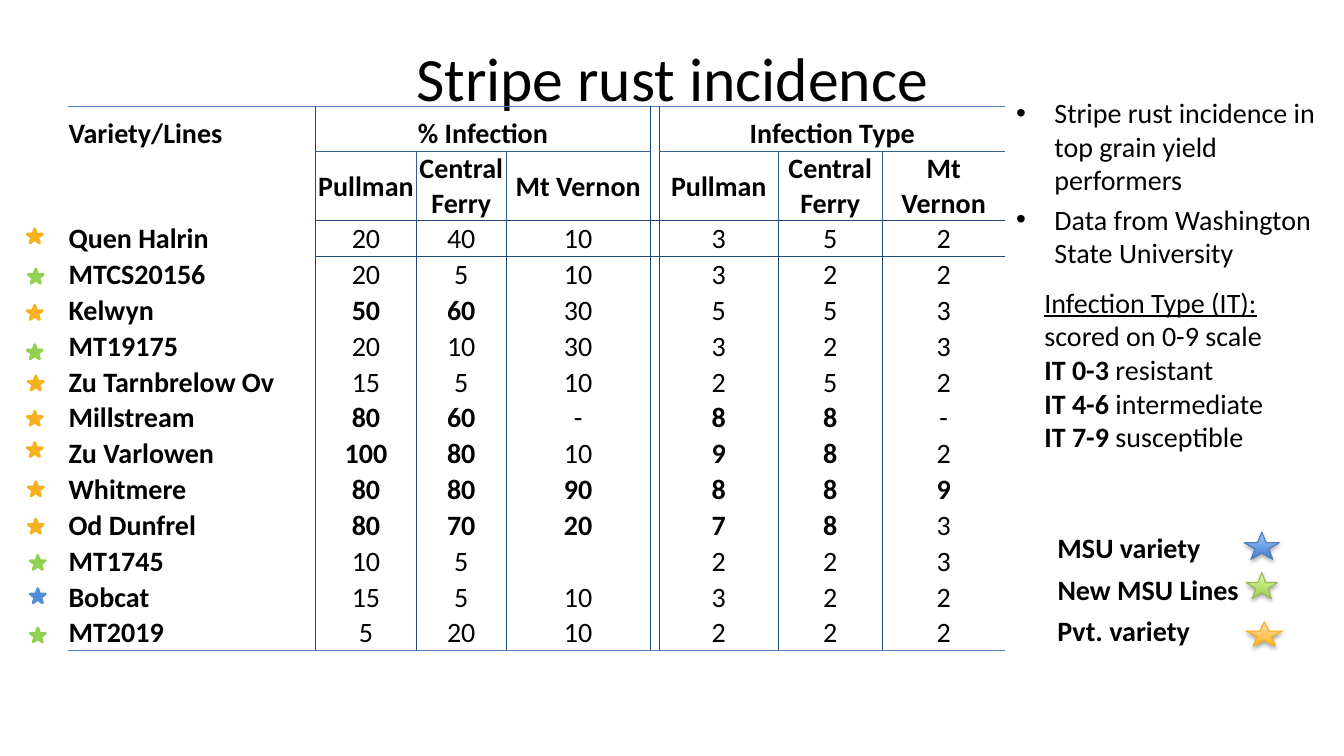
from lxml import etree
from pptx import Presentation, util as u
from pptx.dml.color import RGBColor
from pptx.enum import shapes, text
from pptx.oxml import ns

FONT = "Calibri"
BLACK, NAVY, STEEL, BLUE = "000000", "1F497D", "376092", "4F81BD"
PRIVATE, NEW_LINE, MSU = "F7B11E", "92D050", "558ED5"
COLUMN_WIDTHS = [2.46, 1, 0.89, 1.43, 0.09, 1.18, 1.03, 1.22]
SPACER = 4
SITES = ["Pullman", "Central Ferry", "Mt Vernon"]
BOLD_MARK = "*"

# name, star colour, star left, star top, % infection, infection type
VARIETIES = [
    ("Quen Halrin", PRIVATE, 0.27, 2.27, ["20", "40", "10"], ["3", "5", "2"]),
    ("MTCS20156", NEW_LINE, 0.28, 2.67, ["20", "5", "10"], ["3", "2", "2"]),
    ("Kelwyn", PRIVATE, 0.27, 3.03, ["*50", "*60", "30"], ["5", "5", "3"]),
    ("MT19175", NEW_LINE, 0.27, 3.42, ["20", "10", "30"], ["3", "2", "3"]),
    ("Zu Tarnbrelow Ov", PRIVATE, 0.28, 3.73, ["15", "5", "10"], ["2", "5", "2"]),
    ("Millstream", PRIVATE, 0.27, 4.08, ["*80", "*60", "-"], ["*8", "*8", "-"]),
    ("Zu Varlowen", PRIVATE, 0.27, 4.39, ["*100", "*80", "10"], ["*9", "*8", "2"]),
    ("Whitmere", PRIVATE, 0.28, 4.78, ["*80", "*80", "*90"], ["*8", "*8", "*9"]),
    ("Od Dunfrel", PRIVATE, 0.28, 5.15, ["*80", "*70", "*20"], ["*7", "*8", "3"]),
    ("MT1745", NEW_LINE, 0.3, 5.51, ["10", "5", ""], ["2", "2", "3"]),
    ("Bobcat", MSU, 0.3, 5.84, ["15", "5", "10"], ["3", "2", "2"]),
    ("MT2019", NEW_LINE, 0.3, 6.23, ["5", "20", "10"], ["2", "2", "2"]),
]
LEGEND = [
    ("MSU variety", (10.39, 5.21, 2.4, 0.44), (12.34, 5.28, 0.35, 0.27),
     ("3F80CE", "A4C4FF", "4B7EBC")),
    ("New MSU Lines", (10.39, 5.63, 2.12, 0.44), (12.36, 5.68, 0.31, 0.26),
     ("A0CA4A", "DAFFA5", "98B955")),
    ("Pvt. variety", (10.39, 6.04, 1.76, 0.44), (12.36, 6.17, 0.36, 0.24),
     ("FFB416", "FFDDB9", "F7AF18")),
]


def color(value):
    """Turn a hex string into a colour."""
    return RGBColor.from_string(value)


def add_xml(parent, tag, **attributes):
    """Append a drawing element with the given attributes."""
    return etree.SubElement(parent, ns.qn(tag), attributes)


def style(font, size=20, bold=False):
    """Set face, size, weight and colour of a font."""
    font.name, font.size, font.bold = FONT, u.Pt(size), bold
    font.color.rgb = color(BLACK)


def add_text(slide, box, paragraphs, size=20, bold=False):
    """Add a wrapped text box with one paragraph per string."""
    frame = slide.shapes.add_textbox(*map(u.Inches, box)).text_frame
    frame.word_wrap = True
    frame.text = "\n".join(paragraphs)
    for paragraph in frame.paragraphs:
        for run in paragraph.runs:
            style(run.font, size, bold)
    return frame


def add_title(slide, box):
    """Add the centred slide title."""
    frame = add_text(slide, box, ["Stripe rust incidence"], 44)
    frame.vertical_anchor = text.MSO_ANCHOR.MIDDLE
    frame.paragraphs[0].alignment = text.PP_ALIGN.CENTER


def add_bullets(slide, box):
    """Add the bulleted remarks beside the table."""
    frame = add_text(slide, box, ["Stripe rust incidence in top grain yield performers",
                                  "Data from Washington State University"])
    indent = u.Inches(0.38)
    for index, paragraph in enumerate(frame.paragraphs):
        properties = paragraph._p.get_or_add_pPr()
        properties.set("marL", str(indent))
        properties.set("indent", str(-indent))
        add_xml(properties, "a:buFont", typeface="Arial")
        add_xml(properties, "a:buChar", char="•")
        if index:
            paragraph.space_before = u.Pt(4)


def add_scale(slide, box):
    """Add the explanation of the infection type scale."""
    lines = [("Infection Type (IT): ", "scored on 0-9 scale"), ("IT 0-3 ", "resistant"),
             ("IT 4-6 ", "intermediate"), ("IT 7-9 ", "susceptible")]
    frame = add_text(slide, box, [term for term, meaning in lines])
    for index, (paragraph, line) in enumerate(zip(frame.paragraphs, lines)):
        term = paragraph.runs[0]
        term.font.bold, term.font.underline = index > 0, index == 0
        meaning = paragraph.add_run()
        meaning.text = line[1]
        style(meaning.font)


def vertical_line(row, edge):
    """Give the colour of the line left of column number edge, if any."""
    inside_group = edge not in (1, SPACER, SPACER + 1)
    if edge in (0, len(COLUMN_WIDTHS)) or (row == 0 and inside_group):
        return None
    return STEEL if row == 1 and inside_group else NAVY


def horizontal_line(edge, column):
    """Give the colour of the line above row number edge, if any."""
    if edge in (0, len(VARIETIES) + 2):
        return BLUE
    if edge == 1 and column not in (0, SPACER):
        return STEEL
    return NAVY if edge in (2, 3) and column else None


def set_borders(cell, row, column):
    """Draw the four borders of a table cell."""
    lines = {"a:lnL": vertical_line(row, column), "a:lnR": vertical_line(row, column + 1),
             "a:lnT": horizontal_line(row, column), "a:lnB": horizontal_line(row + 1, column)}
    properties = cell._tc.get_or_add_tcPr()
    for tag, line_color in lines.items():
        line = add_xml(properties, tag, w=str(u.Pt(1)))
        if line_color:
            add_xml(add_xml(line, "a:solidFill"), "a:srgbClr", val=line_color)
        else:
            add_xml(line, "a:noFill")


def fill_cell(cell, value, row, column):
    """Write and format one table cell."""
    set_borders(cell, row, column)
    cell.fill.background()
    cell.margin_left = cell.margin_right = cell.margin_top = u.Inches(0.01)
    cell.margin_bottom = 0
    cell.vertical_anchor = text.MSO_ANCHOR.MIDDLE if row else text.MSO_ANCHOR.BOTTOM
    paragraph = cell.text_frame.paragraphs[0]
    paragraph.text = value.removeprefix(BOLD_MARK)
    if column:
        paragraph.alignment = text.PP_ALIGN.CENTER
    bold = row < 2 or column == 0 or value.startswith(BOLD_MARK)
    for run in paragraph.runs:
        style(run.font, bold=bold)


def add_incidence_table(slide, box):
    """Add the table of infection by variety and site."""
    rows = [["Variety/Lines", "% Infection", "", "", "", "Infection Type", "", ""],
            ["", *SITES, "", *SITES]]
    rows += [[name, *infection, "", *kind] for name, _, _, _, infection, kind in VARIETIES]
    table = slide.shapes.add_table(len(rows), len(COLUMN_WIDTHS), *map(u.Inches, box)).table
    table.first_row = table.horz_banding = False
    for column, width in zip(table.columns, COLUMN_WIDTHS):
        column.width = u.Inches(width)
    body_height = (box[3] - 0.44 - 0.69) / len(VARIETIES)
    heights = [0.44, 0.69] + [body_height] * len(VARIETIES)
    for row, (values, height) in enumerate(zip(rows, heights)):
        table.rows[row].height = u.Inches(height)
        for column, value in enumerate(values):
            fill_cell(table.cell(row, column), value, row, column)
    for first in (1, SPACER + 1):
        table.cell(0, first).merge(table.cell(0, first + 2))


def add_star(slide, box, line_color, line_width):
    """Add a five-pointed star with an outline."""
    star = slide.shapes.add_shape(shapes.MSO_SHAPE.STAR_5_POINT, *map(u.Inches, box))
    star.shadow.inherit = False
    star.line.color.rgb = color(line_color)
    star.line.width = u.Pt(line_width)
    return star


def add_row_stars(slide, size):
    """Mark each variety with a star of its group's colour."""
    for _, group, left, top, _, _ in VARIETIES:
        star = add_star(slide, (left, top, *size), group, 2)
        star.fill.solid()
        star.fill.fore_color.rgb = color(group)


def add_legend_entry(slide, label, label_box, star_box, colors):
    """Add a legend label with its shaded star."""
    star = add_star(slide, star_box, colors[2], 0.75)
    star.fill.gradient()
    star.fill.gradient_angle = 90
    for stop, stop_color in zip(star.fill.gradient_stops, colors):
        stop.color.rgb = color(stop_color)
    effects = star._element.spPr.find(ns.qn("a:effectLst"))
    shadow = add_xml(effects, "a:outerShdw", blurRad=str(u.Pt(3.1)), dist=str(u.Pt(1.8)),
                     dir="5400000", rotWithShape="0")
    add_xml(add_xml(shadow, "a:srgbClr", val=BLACK), "a:alpha", val="35000")
    add_text(slide, label_box, [label], bold=True)


def main():
    """Build and save the slide."""
    presentation = Presentation()
    presentation.slide_width, presentation.slide_height = u.Inches(13.33), u.Inches(7.5)
    slide = presentation.slides.add_slide(presentation.slide_layouts[6])
    add_title(slide, (0.67, 0.3, 12, 0.92))
    add_bullets(slide, (9.98, 0.9, 3.28, 1.83))
    add_incidence_table(slide, (0.67, 1.06, 9.31, 5.4))
    add_scale(slide, (10.26, 2.78, 2.91, 1.78))
    add_row_stars(slide, (0.15, 0.14))
    for entry in LEGEND:
        add_legend_entry(slide, *entry)
    presentation.save("out.pptx")


if __name__ == "__main__":
    main()
